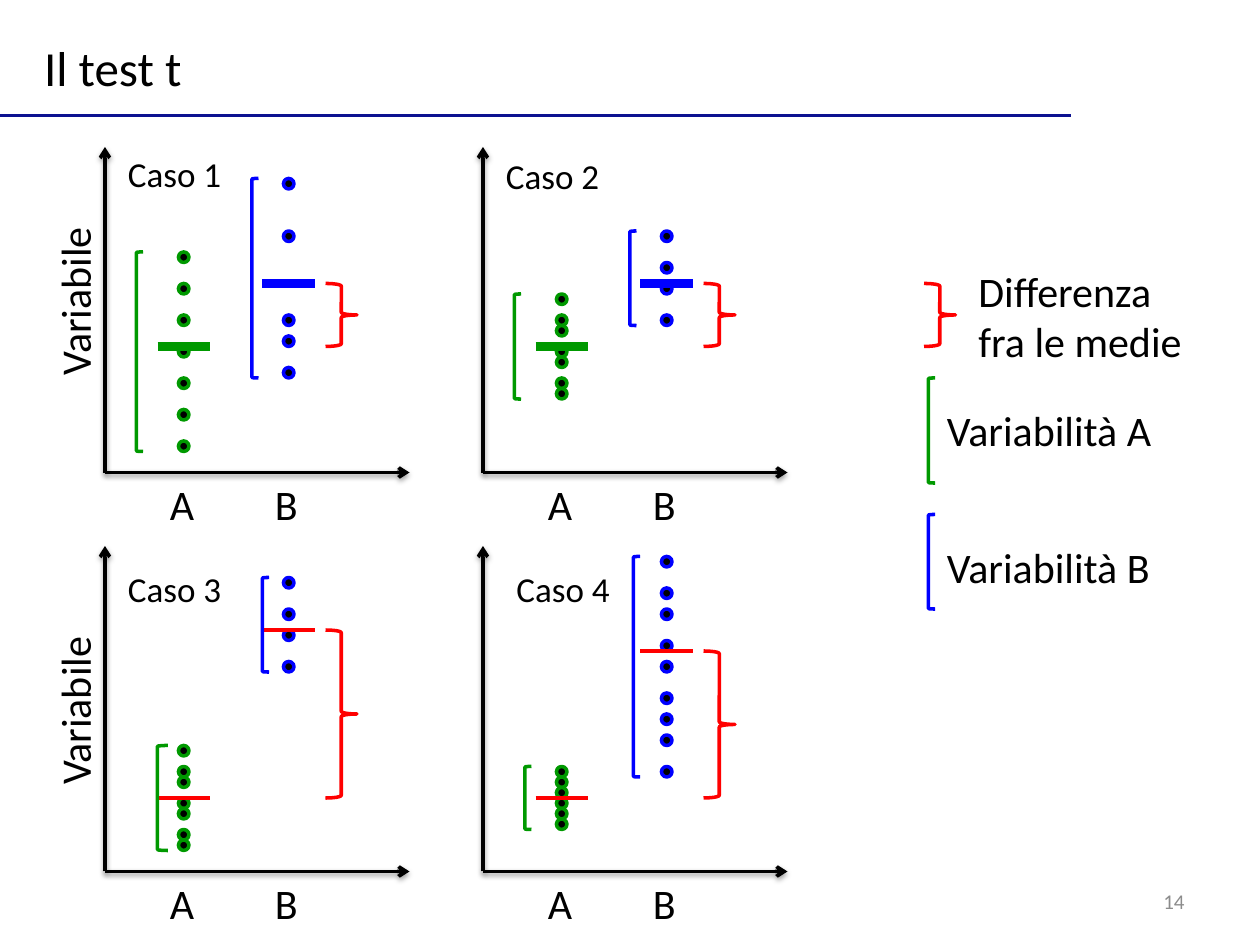
from lxml import etree
from pptx import Presentation
from pptx.dml.color import RGBColor
from pptx.enum.shapes import MSO_CONNECTOR, MSO_SHAPE
from pptx.enum.text import MSO_ANCHOR, PP_ALIGN
from pptx.oxml.ns import qn
from pptx.util import Pt

STRAIGHT = MSO_CONNECTOR.STRAIGHT
DOT, BRACKET, BRACE = MSO_SHAPE.OVAL, MSO_SHAPE.LEFT_BRACKET, MSO_SHAPE.RIGHT_BRACE
MIDDLE = MSO_ANCHOR.MIDDLE
LEFT, RIGHT = PP_ALIGN.LEFT, PP_ALIGN.RIGHT

BLACK, GREEN, BLUE, RED, NAVY, GREY = (
    "000000", "009900", "0000FF", "FF0000", "0C1290", "8C8C8C")
STEP = 6  # grid of the plots; a dot is one step wide
PLOT_W, PLOT_H = 174, 186
PLOT_LEFTS, PLOT_TOPS = (60, 276), (84, 312)
GROUP_LEFTS = {"A": 30, "B": 90}
GROUP_COLOURS = {"A": GREEN, "B": BLUE}

# Dots and means are counted in steps down from the top of the plot.
CASES = [
    {"name": "Caso 1", "column": 0, "row": 0, "name_at": (6, -1), "thick": True,
     "A": {"dots": range(10, 29, 3), "mean": 19, "bracket": 18},
     "B": {"dots": (3, 8, 16, 18, 21), "mean": 13, "bracket": 84}},
    {"name": "Caso 2", "column": 1, "row": 0, "name_at": (6, 0), "thick": True,
     "A": {"dots": (14, 16, 17, 19, 20, 22, 23), "mean": 19, "bracket": 18},
     "B": {"dots": (8, 11, 13, 16), "mean": 13, "bracket": 84}},
    {"name": "Caso 3", "column": 0, "row": 1, "name_at": (6, 8), "thick": False,
     "A": {"dots": (19, 21, 22, 24, 25, 27, 28), "mean": 24, "bracket": 30,
           "bracket_width": 6},
     "B": {"dots": (3, 6, 8, 11), "mean": 8, "bracket": 90}},
    {"name": "Caso 4", "column": 1, "row": 1, "name_at": (12, 8), "thick": False,
     "A": {"dots": range(21, 27), "mean": 24, "bracket": 24},
     "B": {"dots": (1, 4, 6, 9, 11, 14, 16, 18, 21), "mean": 10, "bracket": 86}},
]


def rgb(colour):
    return RGBColor.from_string(colour)


def write(frame, text, size=24, colour=BLACK, align=LEFT, wrap=True):
    """Fill a text frame, one paragraph for each line of text."""
    frame.text = text
    frame.word_wrap = wrap
    frame.vertical_anchor = MIDDLE
    for paragraph in frame.paragraphs:
        paragraph.alignment = align
        font = paragraph.runs[0].font
        font.name, font.size = "Calibri", Pt(size)
        font.color.rgb = rgb(colour)


def add_label(slide, text, left, top, width, height, rotation=0, **text_format):
    label = slide.shapes.add_textbox(Pt(left), Pt(top), Pt(width), Pt(height))
    label.rotation = rotation
    write(label.text_frame, text, **text_format)


def add_line(slide, start, end, colour, width=2, axis=False):
    """Draw a line; an axis also has an arrowhead and a soft shadow."""
    line = slide.shapes.add_connector(STRAIGHT, *(Pt(v) for v in (*start, *end)))
    line.line.color.rgb = rgb(colour)
    line.line.width = Pt(width)
    properties = line._element.spPr
    effects = etree.SubElement(properties, qn("a:effectLst"))
    if axis:
        etree.SubElement(properties.find(qn("a:ln")), qn("a:tailEnd"), type="arrow")
        shadow = etree.SubElement(
            effects, qn("a:outerShdw"), blurRad=str(Pt(3.1)), dist=str(Pt(1.6)),
            dir="5400000", rotWithShape="0")
        black = etree.SubElement(shadow, qn("a:srgbClr"), val=BLACK)
        etree.SubElement(black, qn("a:alpha"), val="38000")


def add_mark(slide, kind, left, top, width, height, colour, fill=None):
    mark = slide.shapes.add_shape(kind, Pt(left), Pt(top), Pt(width), Pt(height))
    mark.shadow.inherit = False
    mark.line.color.rgb = rgb(colour)
    mark.line.width = Pt(2)
    if fill:
        mark.fill.solid()
        mark.fill.fore_color.rgb = rgb(fill)
    else:
        mark.fill.background()


def add_header(slide, left, top, width, height):
    title = slide.shapes.title
    title.left, title.top = Pt(left), Pt(top)
    title.width, title.height = Pt(width), Pt(height)
    write(title.text_frame, "Il test t", size=28, wrap=False)
    add_line(slide, (0, top + 48), (612, top + 48), NAVY)


def add_group(slide, name, group, left, top, thick):
    """Place dots, mean line, range bracket and axis label of one group."""
    colour = GROUP_COLOURS[name]
    x = left + GROUP_LEFTS[name]
    first, last = min(group["dots"]), max(group["dots"])
    mean_y = top + group["mean"] * STEP
    for dot in group["dots"]:
        add_mark(slide, DOT, x + 12, top + dot * STEP, STEP, STEP, colour, BLACK)
    add_line(slide, (x, mean_y), (x + 30, mean_y),
             colour if thick else RED, 5 if thick else 2)
    add_mark(slide, BRACKET, left + group["bracket"], top + first * STEP,
             group.get("bracket_width", 3.75), (last + 1 - first) * STEP, colour)
    add_label(slide, name, x, top + PLOT_H, 36 if name == "A" else 30, 36)


def add_plot(slide, case, left, top):
    bottom = top + PLOT_H
    add_line(slide, (left, bottom), (left, top), BLACK, axis=True)
    add_line(slide, (left, bottom), (left + PLOT_W, bottom), BLACK, axis=True)
    for name in GROUP_LEFTS:
        add_group(slide, name, case[name], left, top, case["thick"])
    upper, lower = case["B"]["mean"], case["A"]["mean"]
    add_mark(slide, BRACE, left + 126, top + upper * STEP,
             18, (lower - upper) * STEP, RED)
    name_x, name_y = case["name_at"]
    add_label(slide, case["name"], left + name_x, top + name_y, 84, 32, size=20)
    if case["column"] == 0:
        add_label(slide, "Variabile", left - 86.6, top + 50.6 + 6 * case["row"],
                  138, 36, rotation=270)


def add_legend(slide, left, top):
    add_mark(slide, BRACE, left, top, 18, 36, RED)
    add_label(slide, "Differenza\nfra le medie", left + 24, top - 14.4, 132, 65.5,
              wrap=False)
    for name, offset, height, text_offset in (("A", 54, 60, 65.5), ("B", 132, 54, 144)):
        add_mark(slide, BRACKET, left + 2.6, top + offset, 3.75, height,
                 GROUP_COLOURS[name])
        add_label(slide, f"Variabilità {name}", left + 6, top + text_offset, 132, 36,
                  wrap=False)


def main():
    deck = Presentation()
    deck.slide_width, deck.slide_height = Pt(720), Pt(540)
    slide = deck.slides.add_slide(deck.slide_layouts[5])
    add_header(slide, 18, 18, 93.6, 41)
    for case in CASES:
        add_plot(slide, case, PLOT_LEFTS[case["column"]], PLOT_TOPS[case["row"]])
    add_legend(slide, 528, 162)
    add_label(slide, "14", 516, 500.4, 168, 28.8, size=12, colour=GREY, align=RIGHT)
    deck.save("out.pptx")


if __name__ == "__main__":
    main()
